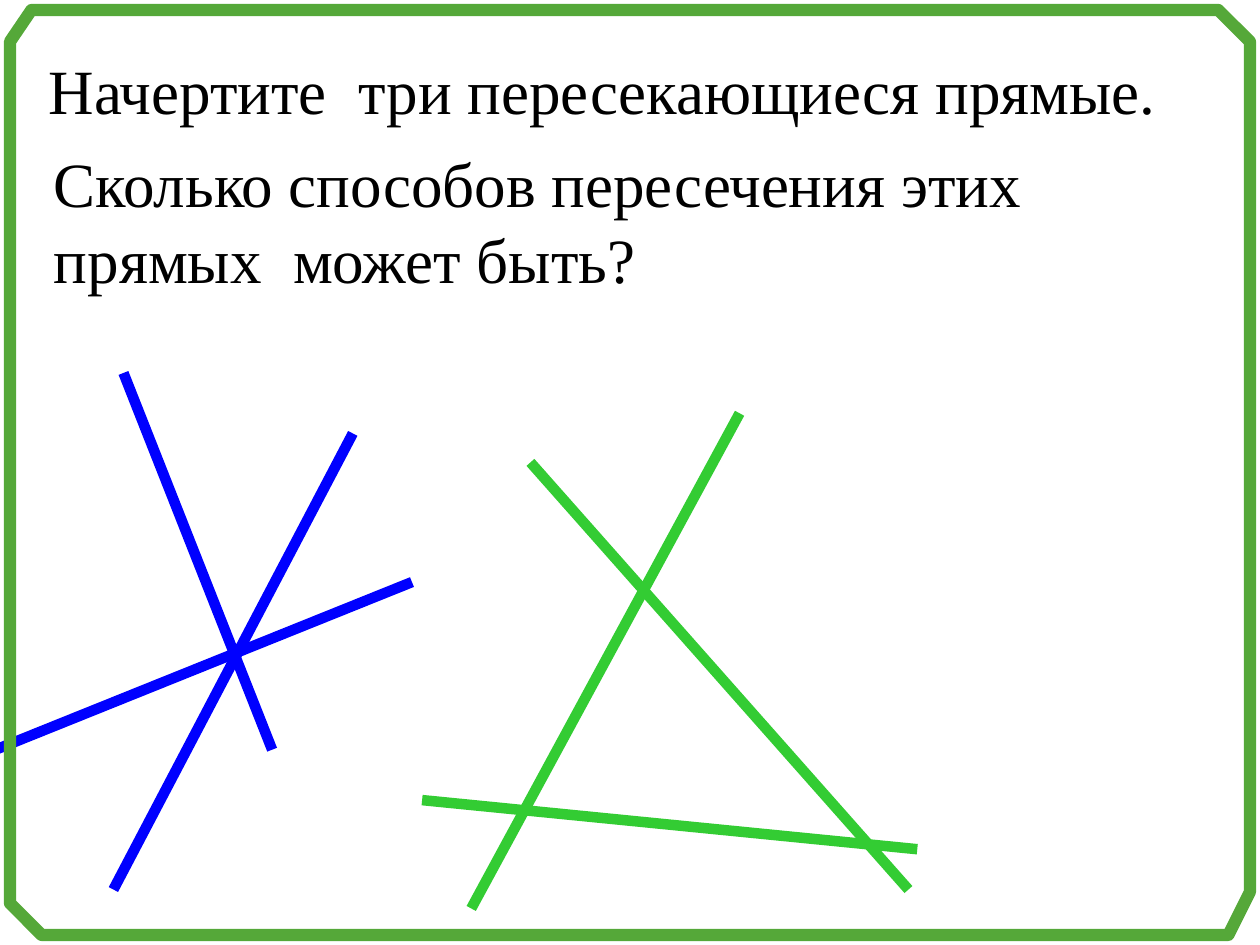
from pptx import Presentation
from pptx import util as u
from pptx.dml.color import RGBColor
from pptx.enum import shapes, text
from lxml import etree

BLUE = RGBColor(0x00, 0x00, 0xFF)
LIME = RGBColor(0x33, 0xCC, 0x33)
GREEN = RGBColor(0x55, 0xA8, 0x39)
BLACK = RGBColor(0, 0, 0)
A = "http://schemas.openxmlformats.org/drawingml/2006/main"

prs = Presentation()
prs.slide_width, prs.slide_height = u.Inches(10), u.Inches(7.5)
s = prs.slides.add_slide(prs.slide_layouts[6])

# Three lines through one point, then three lines crossing in pairs
lines = [
    (BLUE, 0.98, 2.96, 2.16, 5.95),
    (BLUE, -0.83, 6.27, 3.27, 4.62),
    (BLUE, 2.8, 3.44, 0.9, 7.06),
    (LIME, 5.87, 3.28, 3.74, 7.21),
    (LIME, 4.21, 3.67, 7.21, 7.06),
    (LIME, 3.35, 6.35, 7.28, 6.74),
]
for color, *ends in lines:
    c = s.shapes.add_connector(shapes.MSO_CONNECTOR.STRAIGHT, *map(u.Inches, ends))
    c.line.color.rgb = color
    c.line.width = u.Pt(6)
    etree.SubElement(c._element.spPr, f"{{{A}}}effectLst")

# Frame with cut corners
frame = [(0.08, 0.33), (0.08, 7.17), (0.33, 7.42), (9.75, 7.42), (9.92, 7.08),
         (9.92, 0.33), (9.67, 0.08), (0.25, 0.08)]
pts = [(u.Inches(x), u.Inches(y)) for x, y in frame]
fb = s.shapes.build_freeform(*pts[0])
fb.add_line_segments(pts[1:], close=True)
sp = fb.convert_to_shape()
sp.shadow.inherit = False
sp.fill.background()
sp.line.color.rgb = GREEN
sp.line.width = u.Pt(7)

# Task and question
texts = [
    ("Начертите  три пересекающиеся прямые.", False, 0.29, 0.36, 9.08, 0.71),
    ("Сколько способов пересечения этих прямых  может быть?", True, 0.33, 1.1, 8.94, 1.31),
]
for words, wrap, *box in texts:
    tf = s.shapes.add_textbox(*map(u.Inches, box)).text_frame
    tf.word_wrap = wrap
    tf.auto_size = text.MSO_AUTO_SIZE.SHAPE_TO_FIT_TEXT
    r = tf.paragraphs[0].add_run()
    r.text = words
    r.font.name = "Times New Roman"
    r.font.size = u.Pt(36)
    r.font.color.rgb = BLACK

prs.save("out.pptx")
